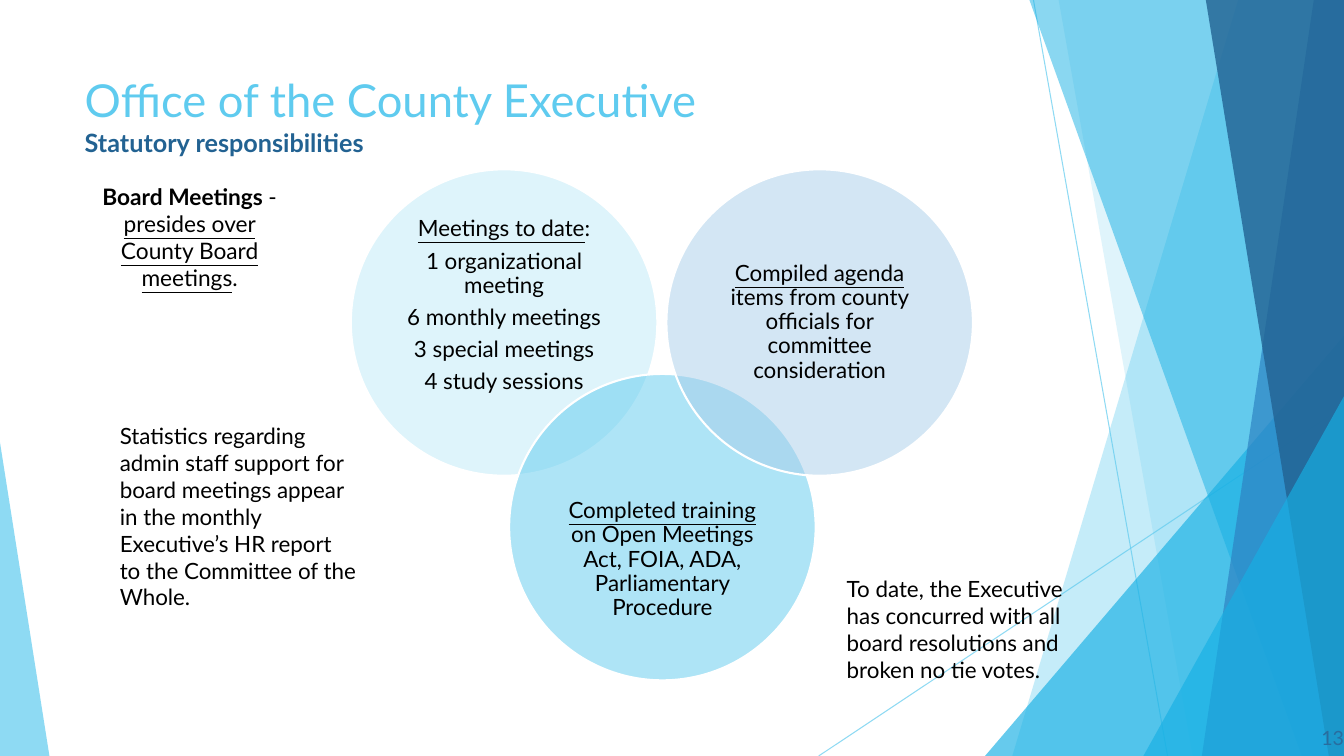
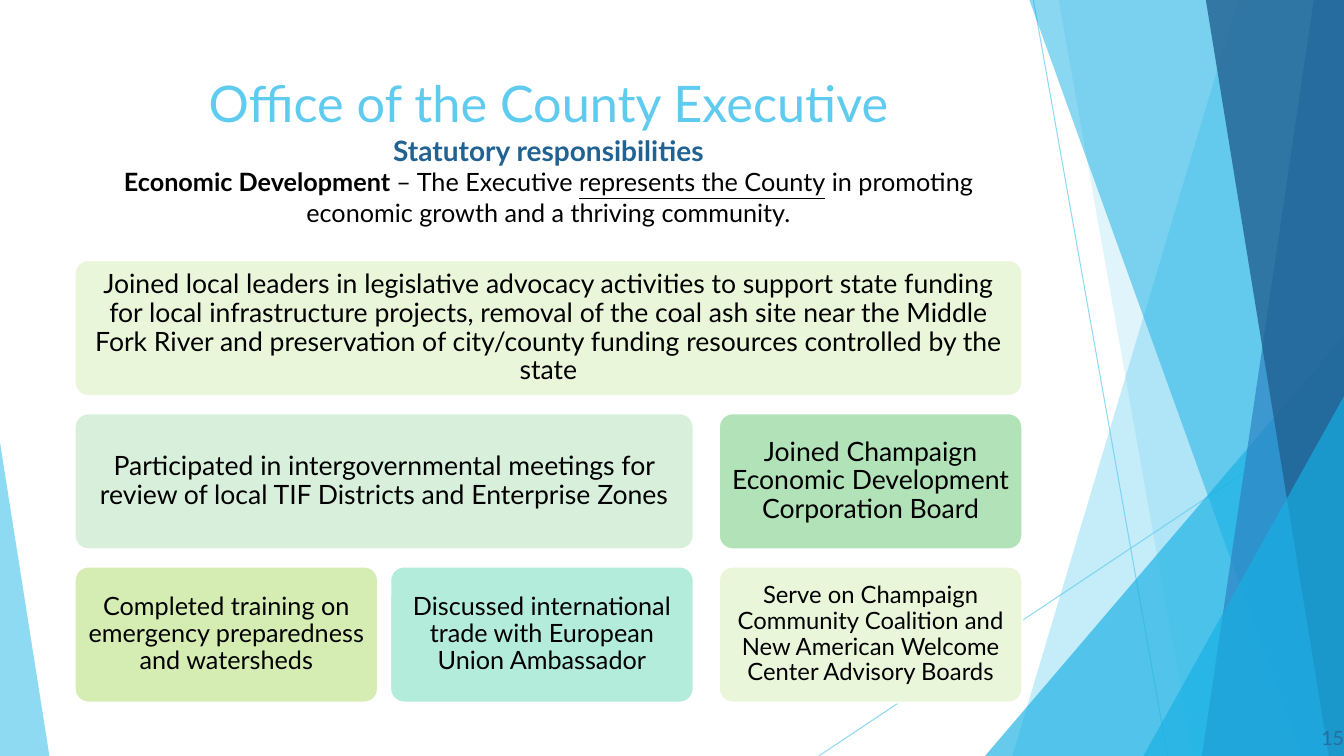
from dataclasses import dataclass

from lxml import etree
from pptx import Presentation
from pptx.dml.color import RGBColor
from pptx.enum.shapes import MSO_CONNECTOR, MSO_SHAPE
from pptx.enum.text import MSO_ANCHOR, MSO_AUTO_SIZE, PP_ALIGN
from pptx.oxml.ns import qn
from pptx.util import Inches, Pt

LEFT, CENTER, RIGHT = PP_ALIGN.LEFT, PP_ALIGN.CENTER, PP_ALIGN.RIGHT
TOP, MIDDLE = MSO_ANCHOR.TOP, MSO_ANCHOR.MIDDLE
OVAL, ROUNDED = MSO_SHAPE.OVAL, MSO_SHAPE.ROUNDED_RECTANGLE
TRIANGLE = MSO_SHAPE.ISOSCELES_TRIANGLE
STRAIGHT = MSO_CONNECTOR.STRAIGHT
TITLE_ONLY = 5
WIDTH, HEIGHT = 13.33, 7.5
MARGIN, CONTENT_WIDTH = 0.74, 9.4


@dataclass(frozen=True)
class Theme:
    font: str = "Lato"
    text: str = "000000"
    white: str = "FFFFFF"
    sky: str = "5FCBEF"
    cyan: str = "17B0E4"
    blue: str = "2E83C3"
    navy: str = "226292"
    number: str = "286D9F"
    pale_sky: str = "BFEAF9"
    pale_blue: str = "A8CEEA"
    cream: str = "EAF6D9"
    mint: str = "D8F0DB"
    lime: str = "D5EDB3"
    aqua: str = "B3ECDA"
    green: str = "B1E2B8"
    body_size: float = 16
    number_size: float = 14


THEME = Theme()


@dataclass(frozen=True)
class Span:
    """A stretch of text in one format; a final newline breaks the line."""
    text: str
    size: float = THEME.body_size
    color: str = THEME.text
    bold: bool = False
    underline: bool = False


def set_alpha(properties, percent):
    for color in properties.iter(qn("a:srgbClr")):
        etree.SubElement(color, qn("a:alpha")).set("val", str(percent * 1000))


class Deck:
    def __init__(self, theme):
        self.theme = theme
        self.prs = Presentation()
        self.prs.slide_width = Inches(WIDTH)
        self.prs.slide_height = Inches(HEIGHT)
        self.layout = self.prs.slide_layouts[TITLE_ONLY]
        self.slide = None

    def new_slide(self, number):
        self.slide = self.prs.slides.add_slide(self.layout)
        label = Span(number, self.theme.number_size, self.theme.number)
        self.text_box(12.68, 7.12, 0.75, 0.4, [[label]], align=RIGHT, anchor=MIDDLE)

    def fill_frame(self, frame, paragraphs, align=LEFT, anchor=TOP, spacing=1.0, after=0):
        frame.word_wrap = True
        frame.auto_size = MSO_AUTO_SIZE.NONE
        frame.vertical_anchor = anchor
        for index, spans in enumerate(paragraphs):
            paragraph = frame.add_paragraph() if index else frame.paragraphs[0]
            paragraph.alignment = align
            paragraph.line_spacing = spacing
            paragraph.space_after = Pt(after)
            for span in spans:
                run = paragraph.add_run()
                run.text = span.text.rstrip("\n")
                run.font.name = self.theme.font
                run.font.size = Pt(span.size)
                run.font.bold = span.bold
                run.font.underline = span.underline
                run.font.color.rgb = RGBColor.from_string(span.color)
                if span.text.endswith("\n"):
                    paragraph.add_line_break()

    def title(self, height, spans, align=LEFT):
        heading = self.slide.shapes.title
        heading.left, heading.top = Inches(MARGIN), Inches(0.67)
        heading.width, heading.height = Inches(CONTENT_WIDTH), Inches(height)
        self.fill_frame(heading.text_frame, [spans], align)

    def text_box(self, x, y, w, h, paragraphs, side_inset=0.1, **style):
        box = self.slide.shapes.add_textbox(Inches(x), Inches(y), Inches(w), Inches(h))
        frame = box.text_frame
        frame.margin_left = frame.margin_right = Inches(side_inset)
        self.fill_frame(frame, paragraphs, **style)

    def paint(self, shape, color, alpha=100):
        shape.shadow.inherit = False
        shape.fill.solid()
        shape.fill.fore_color.rgb = RGBColor.from_string(color)
        if alpha < 100:
            set_alpha(shape._element.spPr, alpha)
        shape.line.fill.background()

    def panel(self, kind, x, y, w, h, color, paragraphs, alpha=100,
              inset=0.07, extra_top=0, extra_bottom=0):
        """White-edged shape with centred text; extra insets shift the text."""
        shape = self.slide.shapes.add_shape(kind, Inches(x), Inches(y), Inches(w), Inches(h))
        if kind == ROUNDED:
            shape.adjustments[0] = 0.1
        self.paint(shape, color, alpha)
        shape.line.color.rgb = RGBColor.from_string(self.theme.white)
        shape.line.width = Pt(1.5)
        frame = shape.text_frame
        frame.margin_left = frame.margin_right = Inches(inset)
        frame.margin_top = Inches(inset + extra_top)
        frame.margin_bottom = Inches(inset + extra_bottom)
        self.fill_frame(frame, paragraphs, CENTER, MIDDLE, spacing=0.9,
                        after=0.35 * paragraphs[0][0].size)

    def ray(self, shapes, x1, y1, x2, y2):
        line = shapes.add_connector(STRAIGHT, Inches(x1), Inches(y1), Inches(x2), Inches(y2))
        line.line.color.rgb = RGBColor.from_string(self.theme.sky)
        line.line.width = Pt(0.75)
        properties = line._element.spPr
        set_alpha(properties, 70)
        etree.SubElement(properties, qn("a:effectLst"))

    def ribbon(self, shapes, top_x, bottom_x, color, alpha):
        """Band from a slanted left edge to the right side of the slide."""
        outline = shapes.build_freeform(Inches(top_x), 0)
        outline.add_line_segments([(Inches(WIDTH), 0), (Inches(WIDTH), Inches(HEIGHT)),
                                   (Inches(bottom_x), Inches(HEIGHT))])
        self.paint(outline.convert_to_shape(), color, alpha)

    def corner(self, shapes, x, y, w, apex, color, alpha):
        """Right triangle standing on the bottom edge of the slide."""
        shape = shapes.add_shape(TRIANGLE, Inches(x), Inches(y), Inches(w), Inches(HEIGHT - y))
        shape.adjustments[0] = apex
        self.paint(shape, color, alpha)

    def backdrop(self):
        """Draw the facets as one group, then hand it to the shared layout."""
        t = self.theme
        group = self.slide.shapes.add_group_shape()
        facets = group.shapes
        self.ray(facets, 10.25, 0, 11.58, HEIGHT)
        self.ray(facets, WIDTH, 4.03, 8.12, HEIGHT)
        self.ribbon(facets, 12.28, 10.04, t.sky, 36)
        self.ribbon(facets, 10.5, 11.83, t.sky, 20)
        self.corner(facets, 9.77, 3.33, 3.56, 1, t.cyan, 66)
        self.ribbon(facets, 10.21, 12.91, t.cyan, 50)
        self.ribbon(facets, 13.03, 11.92, t.blue, 70)
        self.ribbon(facets, 11.96, 13.18, t.navy, 80)
        self.corner(facets, 11.34, 3.93, 1.99, 1, t.cyan, 66)
        self.corner(facets, 0, 4.39, 0.49, 0, t.sky, 70)
        self.layout.shapes._spTree.append(group._element)


def heading_spans(office_size, subtitle_size, subtitle_end=""):
    return [Span("Office of the County Executive\n", office_size, THEME.sky),
            Span("Statutory responsibilities" + subtitle_end, subtitle_size,
                 THEME.navy, bold=True)]


def board_meetings(deck):
    deck.new_slide("13")
    deck.title(1.02, heading_spans(32.4, 18))

    diameter, upper_y, lower_y = 3.04, 1.68, 3.71
    meetings = [[Span("Meetings to date", underline=True), Span(":")]]
    meetings += [[Span(line)] for line in (
        "1 organizational meeting", "6 monthly meetings",
        "3 special meetings", "4 study sessions")]
    training = [[Span("Completed training ", underline=True),
                 Span("on Open Meetings Act, FOIA, ADA, Parliamentary Procedure")]]
    agenda = [[Span("Compiled agenda ", underline=True),
               Span("items from county officials for committee consideration")]]
    for x, y, color, paragraphs, extra_top, extra_bottom in (
            (3.48, upper_y, THEME.pale_sky, meetings, 0, 0.33),
            (5.05, lower_y, THEME.sky, training, 0.65, 0),
            (6.61, upper_y, THEME.pale_blue, agenda, 0, 0)):
        deck.panel(OVAL, x, y, diameter, diameter, color, paragraphs, alpha=50,
                   extra_top=extra_top, extra_bottom=extra_bottom)

    deck.text_box(8.3, 5.66, 2.57, 1.18, [[Span(
        "To date, the Executive has concurred with all board resolutions "
        "and broken no tie votes.")]])
    deck.text_box(1.09, 4.14, 2.54, 1.99, [[Span(
        "Statistics regarding admin staff support for board meetings appear in the "
        "monthly Executive’s HR report to the Committee of the Whole.")]])
    size = 16.2
    deck.text_box(MARGIN, 1.76, 2.28, 1.15, [[
        Span("Board Meetings ", size, bold=True), Span("- ", size),
        Span("presides over County Board meetings", size, underline=True),
        Span(".", size)]], side_inset=0.2, align=CENTER)


def economic_development(deck):
    deck.new_slide("15")
    size = 18
    deck.title(1.76, heading_spans(36, 20, "\n") + [
        Span("Economic Development ", size, bold=True),
        Span("– The Executive ", size),
        Span("represents the County", size, underline=True),
        Span(" in promoting economic growth and a thriving community.", size)], CENTER)

    row_tops = [2.58 + 1.52 * row for row in range(3)]
    tile_height, narrow, wide = 1.35, 3.01, 6.14
    second_x, third_x = MARGIN + wide - narrow, MARGIN + CONTENT_WIDTH - narrow
    for row, x, width, color, size, inset, text in (
            (0, MARGIN, CONTENT_WIDTH, THEME.cream, 19, 0.08,
             "Joined local leaders in legislative advocacy activities to support state "
             "funding for local infrastructure projects, removal of the coal ash site near "
             "the Middle Fork River and preservation of city/county funding resources "
             "controlled by the state"),
            (1, MARGIN, wide, THEME.mint, 19, 0.08,
             "Participated in intergovernmental meetings for review of local TIF Districts "
             "and Enterprise Zones"),
            (2, MARGIN, narrow, THEME.lime, 18, 0.07,
             "Completed training on emergency preparedness and watersheds"),
            (2, second_x, narrow, THEME.aqua, 18, 0.07,
             "Discussed international trade with European Union Ambassador"),
            (1, third_x, narrow, THEME.green, 19, 0.08,
             "Joined Champaign Economic Development Corporation Board"),
            (2, third_x, narrow, THEME.cream, 17, 0.07,
             "Serve on Champaign Community Coalition and New American Welcome Center "
             "Advisory Boards")):
        deck.panel(ROUNDED, x, row_tops[row], width, tile_height, color,
                   [[Span(text, size)]], inset=inset)


def main():
    deck = Deck(THEME)
    board_meetings(deck)
    economic_development(deck)
    deck.backdrop()
    deck.prs.save("out.pptx")


if __name__ == "__main__":
    main()
